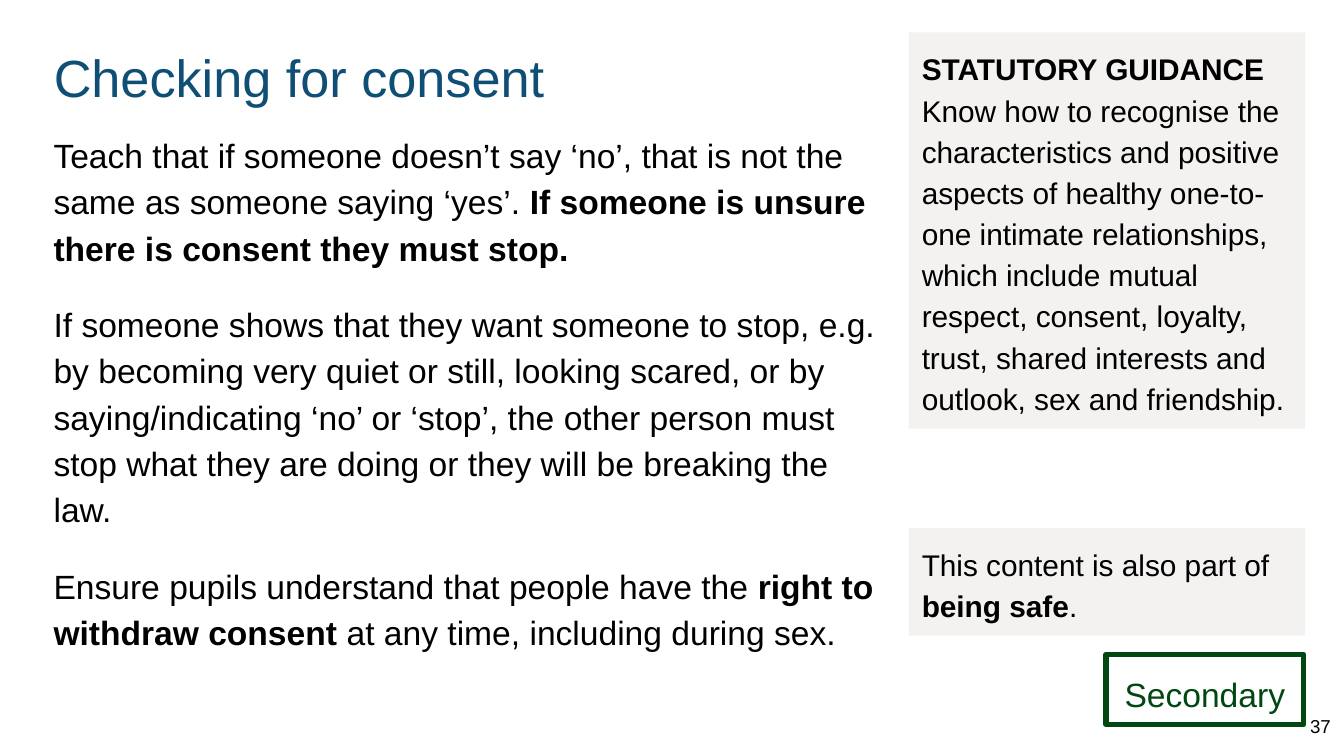
from dataclasses import dataclass

from pptx import Presentation
from pptx.dml.color import RGBColor
from pptx.enum.shapes import MSO_SHAPE
from pptx.enum.text import MSO_ANCHOR, MSO_AUTO_SIZE, PP_ALIGN
from pptx.util import Inches, Pt

RECTANGLE = MSO_SHAPE.RECTANGLE
TOP, MIDDLE = MSO_ANCHOR.TOP, MSO_ANCHOR.MIDDLE
LEFT, CENTER, RIGHT = PP_ALIGN.LEFT, PP_ALIGN.CENTER, PP_ALIGN.RIGHT
NO_AUTOFIT = MSO_AUTO_SIZE.NONE
TITLE_ONLY = 5


@dataclass(frozen=True)
class Theme:
    font: str = "Arial"
    title_color: str = "104F75"
    text_color: str = "000000"
    panel_color: str = "F3F2F1"
    badge_color: str = "004712"
    title_size: int = 28
    body_size: int = 18
    panel_size: int = 16
    number_size: int = 10
    inset: float = 0.1
    line_spacing: float = 1.15
    paragraph_gap: int = 16
    badge_line: int = 3


THEME = Theme()

# Each paragraph is a list of (text, bold) spans.
BODY = [
    [("Teach that if someone doesn’t say ‘no’, that is not the same as someone "
      "saying ‘yes’. ", False),
     ("If someone is unsure there is consent they must stop.", True)],
    [("If someone shows that they want someone to stop, e.g. by becoming very "
      "quiet or still, looking scared, or by saying/indicating ‘no’ or ‘stop’, "
      "the other person must stop what they are doing or they will be breaking "
      "the law.", False)],
    [("Ensure pupils understand that people have the ", False),
     ("right to withdraw consent", True),
     (" at any time, including during sex.", False)],
]
GUIDANCE = [
    [("STATUTORY GUIDANCE ", True),
     ("Know how to recognise the characteristics and positive aspects of healthy "
      "one-to-one intimate relationships, which include mutual respect, consent, "
      "loyalty, trust, shared interests and outlook, sex and friendship.", False)],
]
RELATED = [
    [("This content is also part of ", False), ("being safe", True), (".", False)],
]


def rgb(color):
    return RGBColor.from_string(color)


def place(shape, box):
    shape.left, shape.top, shape.width, shape.height = map(Inches, box)


def write(shape, paragraphs, size, color=THEME.text_color, align=LEFT,
          anchor=TOP, spacing=THEME.line_spacing):
    frame = shape.text_frame
    frame.word_wrap = True
    frame.auto_size = NO_AUTOFIT
    frame.vertical_anchor = anchor
    inset = Inches(THEME.inset)
    frame.margin_left = frame.margin_right = inset
    frame.margin_top = frame.margin_bottom = inset
    for index, spans in enumerate(paragraphs):
        para = frame.add_paragraph() if index else frame.paragraphs[0]
        para.alignment = align
        para.line_spacing = spacing
        para.space_before = Pt(THEME.paragraph_gap if index else 0)
        for text, bold in spans:
            span = para.add_run()
            span.text = text
            span.font.name = THEME.font
            span.font.size = Pt(size)
            span.font.bold = bold
            span.font.color.rgb = rgb(color)


def add_title(page, box, text):
    title = page.shapes.title
    place(title, box)
    write(title, [[(text, False)]], THEME.title_size, THEME.title_color, spacing=1.0)


def add_text(page, box, paragraphs, size, **style):
    write(page.shapes.add_textbox(*map(Inches, box)), paragraphs, size, **style)


def add_rectangle(page, box):
    shape = page.shapes.add_shape(RECTANGLE, *map(Inches, box))
    shape.shadow.inherit = False
    return shape


def add_panel(page, box, paragraphs):
    panel = add_rectangle(page, box)
    panel.fill.solid()
    panel.fill.fore_color.rgb = rgb(THEME.panel_color)
    panel.line.fill.background()
    write(panel, paragraphs, THEME.panel_size)


def add_badge(page, box, text):
    badge = add_rectangle(page, box)
    badge.fill.background()
    badge.line.color.rgb = rgb(THEME.badge_color)
    badge.line.width = Pt(THEME.badge_line)
    write(badge, [[(text, False)]], THEME.body_size, THEME.badge_color, CENTER)


def add_sidebar(page, box):
    """Stack the two guidance panels at the top and bottom of the box."""
    left, top, width, height = box
    guidance_height, related_height = 2.95, 0.8
    add_panel(page, (left, top, width, guidance_height), GUIDANCE)
    related_top = top + height - related_height
    add_panel(page, (left, related_top, width, related_height), RELATED)


def build_consent_slide(deck):
    page = deck.slides.add_slide(deck.slide_layouts[TITLE_ONLY])
    add_title(page, (0.3, 0.24, 9.63, 0.63), "Checking for consent")
    add_text(page, (0.3, 0.86, 6.32, 4.55), BODY, THEME.body_size)
    add_sidebar(page, (6.76, 0.24, 2.95, 4.49))
    add_badge(page, (8.23, 4.87, 1.47, 0.52), "Secondary")
    add_text(page, (9.4, 5.19, 0.6, 0.43), [[("37", False)]], THEME.number_size,
             align=RIGHT, anchor=MIDDLE, spacing=1.0)


def main():
    deck = Presentation()
    deck.slide_width = Inches(10)
    deck.slide_height = Inches(10 * 9 / 16)
    build_consent_slide(deck)
    deck.save("out.pptx")


if __name__ == "__main__":
    main()
